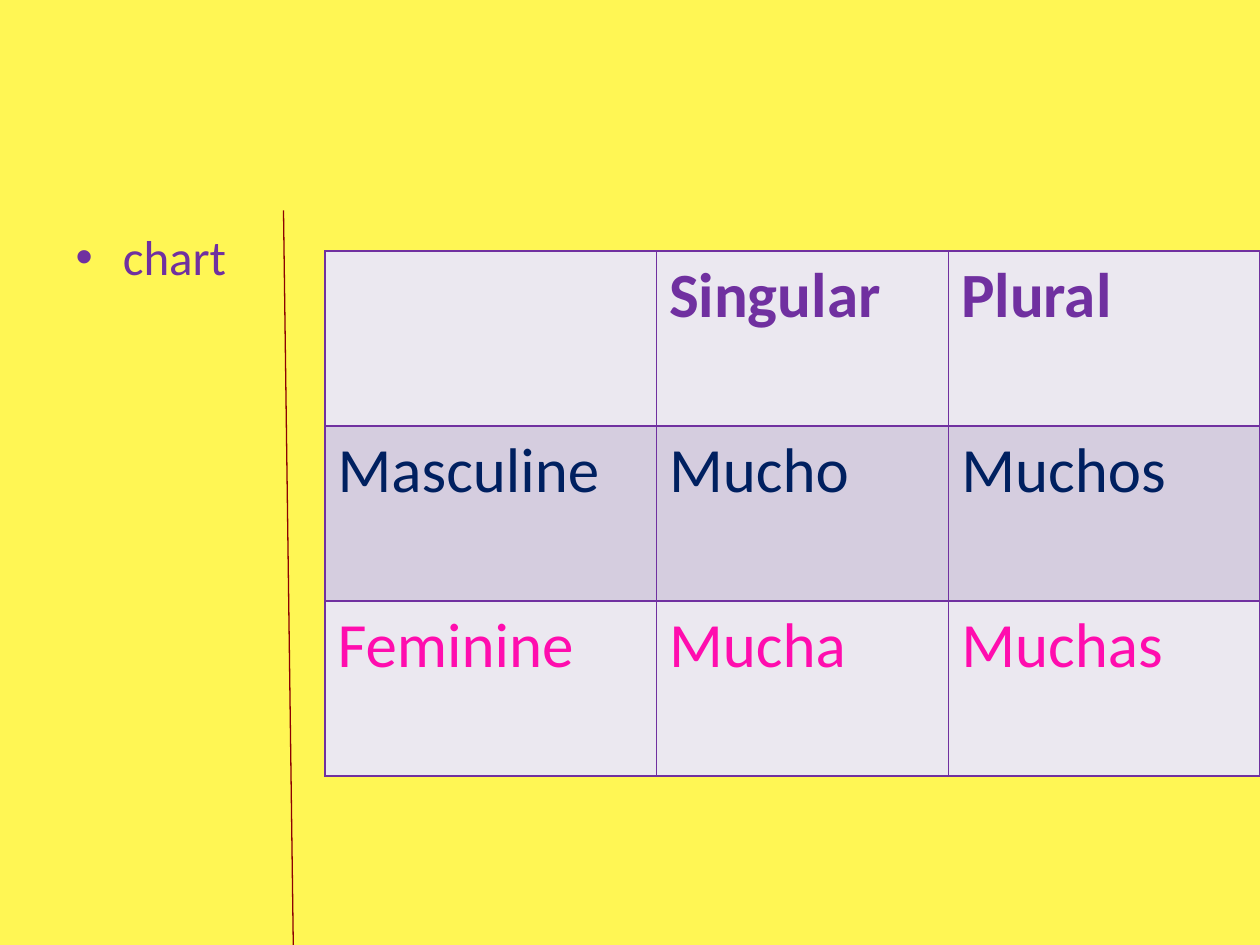
from lxml.etree import SubElement
from pptx import Presentation
from pptx.dml.color import RGBColor
from pptx.enum.shapes import MSO_CONNECTOR
from pptx.oxml.ns import qn
from pptx.util import Inches, Pt

YELLOW = RGBColor(0xFF, 0xF6, 0x54)
PURPLE = RGBColor(0x70, 0x30, 0xA0)
NAVY = RGBColor(0x00, 0x20, 0x60)
PINK = RGBColor(0xFF, 0x0D, 0xAE)
MAROON = RGBColor(0x8D, 0x00, 0x00)
LIGHT = RGBColor(0xEB, 0xE8, 0xF0)
LILAC = RGBColor(0xD5, 0xCD, 0xDF)
FONT = "Calibri"

COL_WIDTHS = [2.63, 2.32, 2.47]
ROW_HEIGHT = 1.39
ROWS = [
    (["", "Singular", "Plural"], PURPLE, LIGHT, True),
    (["Masculine", "Mucho", "Muchos"], NAVY, LILAC, False),
    (["Feminine", "Mucha", "Muchas"], PINK, LIGHT, False),
]


def format_text(tf, size, color, bold=False):
    for p in tf.paragraphs:
        p.font.size = Pt(size)
        for r in p.runs:
            r.font.name = FONT
            r.font.size = Pt(size)
            r.font.bold = bold
            r.font.color.rgb = color


def add_body(slide, text):
    sp = slide.placeholders[1]
    sp.left, sp.top = Inches(0.5), Inches(1.75)
    sp.width, sp.height = Inches(4.42), Inches(4.95)
    tf = sp.text_frame
    tf.text = text
    tf.paragraphs[0].space_before = Pt(0)
    format_text(tf, 28, PURPLE)


def set_borders(cell, color, width):
    tcPr = cell._tc.get_or_add_tcPr()
    for i, side in enumerate(("a:lnL", "a:lnR", "a:lnT", "a:lnB")):
        ln = SubElement(tcPr, qn(side), w=str(Pt(width)))
        fill = SubElement(ln, qn("a:solidFill"))
        SubElement(fill, qn("a:srgbClr"), val=str(color))
        tcPr.insert(i, ln)


def add_adjective_table(slide):
    table = slide.shapes.add_table(
        len(ROWS), len(COL_WIDTHS), Inches(2.58), Inches(1.99),
        Inches(sum(COL_WIDTHS)), Inches(ROW_HEIGHT * len(ROWS))).table
    for column, width in zip(table.columns, COL_WIDTHS):
        column.width = Inches(width)
    for row, (words, color, fill, bold) in zip(table.rows, ROWS):
        row.height = Inches(ROW_HEIGHT)
        for cell, word in zip(row.cells, words):
            cell.text = word
            format_text(cell.text_frame, 36, color, bold)
            cell.fill.solid()
            cell.fill.fore_color.rgb = fill
            set_borders(cell, PURPLE, 1)


def add_divider(slide):
    line = slide.shapes.add_connector(
        MSO_CONNECTOR.STRAIGHT,
        Inches(2.25), Inches(1.67), Inches(2.33), Inches(7.67))
    line.line.color.rgb = MAROON
    line.line.width = Pt(0.75)
    SubElement(line._element.spPr, qn("a:effectLst"))


def main():
    prs = Presentation()
    prs.slide_width, prs.slide_height = Inches(10), Inches(7.5)
    slide = prs.slides.add_slide(prs.slide_layouts[1])
    slide.background.fill.solid()
    slide.background.fill.fore_color.rgb = YELLOW
    title = slide.shapes.title._element
    title.getparent().remove(title)
    add_body(slide, "chart")
    add_adjective_table(slide)
    add_divider(slide)
    prs.save("out.pptx")


if __name__ == "__main__":
    main()
